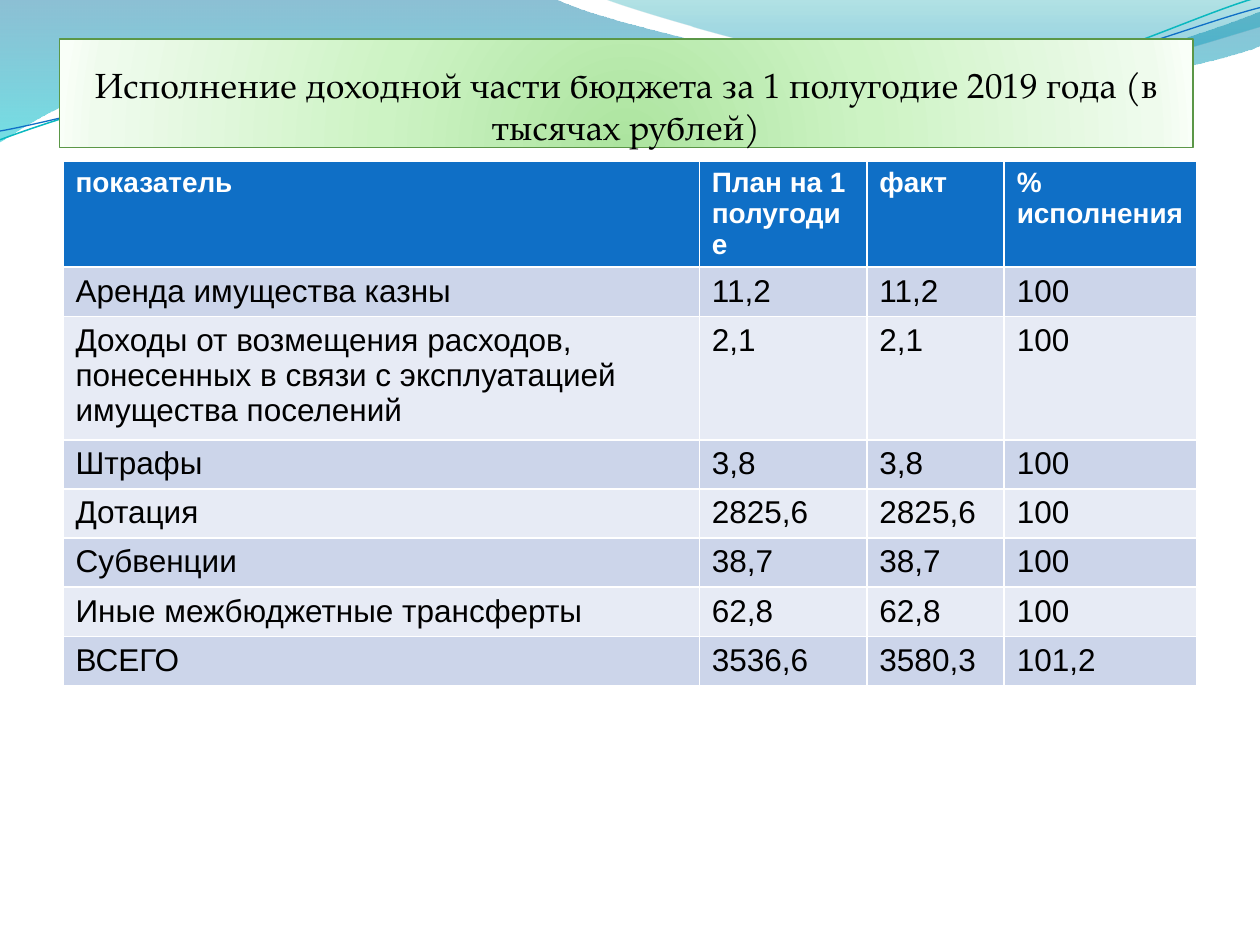
from math import cos, radians, sin

from lxml import etree
from pptx import Presentation
from pptx.dml.color import RGBColor
from pptx.enum.shapes import MSO_SHAPE
from pptx.enum.text import MSO_ANCHOR, PP_ALIGN
from pptx.oxml import parse_xml
from pptx.oxml.ns import qn
from pptx.util import Inches, Pt

RECT, BOTTOM, CENTER = MSO_SHAPE.RECTANGLE, MSO_ANCHOR.BOTTOM, PP_ALIGN.CENTER
NS = 'xmlns:a="http://schemas.openxmlformats.org/drawingml/2006/main"'
LINEAR_DOWN = '<a:lin ang="5400000" scaled="1"/>'
RADIAL = ('<a:path path="circle"><a:fillToRect l="50000" t="130000" '
          'r="50000" b="-30000"/></a:path>')

TITLE = "Исполнение доходной части бюджета за 1 полугодие 2019 года (в тысячах рублей)"
TITLE_STOPS = [(0, "ACE49F", 100), (43, "CDF3C4", 100),
               (93, "EFFBED", 100), (100, "F9FFF8", 100)]
ROWS = [
    ("показатель", "План на 1 полугодие", "факт", "% исполнения"),
    ("Аренда имущества казны", "11,2", "11,2", "100"),
    ("Доходы от возмещения расходов, понесенных в связи с эксплуатацией "
     "имущества поселений", "2,1", "2,1", "100"),
    ("Штрафы", "3,8", "3,8", "100"),
    ("Дотация", "2825,6", "2825,6", "100"),
    ("Субвенции", "38,7", "38,7", "100"),
    ("Иные межбюджетные трансферты", "62,8", "62,8", "100"),
    ("ВСЕГО", "3536,6", "3580,3", "101,2"),
]
COL_WIDTHS = [5.05, 1.33, 1.09, 1.53]
ROW_HEIGHTS = [0.68, 0.39, 0.98] + [0.39] * 5
HEADER_FILL, BANDS = "0F6FC6", ("E7EBF5", "CCD5EA")

# Box, then steps: a point is a straight step, six numbers are a Bezier step.
BANNERS = [
    ((-0.01, -0.01, 10.02, 1.14),
     [(0, 0), (4.4, -0.01), (4.76, 0.17, 6.64, 0.63, 7.58, 0.63),
      (8.53, 0.63, 9.58, 0.26, 10, 0.09), (10.01, 0.36),
      (9.83, 0.44, 8.7, 0.76, 7.46, 0.75), (6.22, 0.75, 3.82, 0.28, 2.57, 0.34),
      (1.29, 0.36, 0.46, 0.83, -0.01, 1.13), (0, 0)],
     [(0, "0074A1", 45), (100, "00C6CF", 55)]),
    ((4.79, -0.01, 5.21, 0.7),
     [(4.79, -0.01), (5.09, 0.11, 6.82, 0.62, 7.69, 0.65),
      (8.56, 0.69, 9.61, 0.32, 10, 0.21), (10, 0), (4.79, -0.01)],
     [(0, "00A1A9", 30), (80, "008BBF", 45)]),
]
WAVE_ANGLE = -2.7
WAVES = [
    ((-0.02, 0.22, 10.02, 0.71),
     [(0, 1.11), (0.48, 0.93, 1.58, 0.57, 2.77, 0.52),
      (3.95, 0.47, 5.93, 0.89, 7.13, 0.8), (8.33, 0.71, 9.38, 0.15, 9.98, -0.02)],
     "0AB8BF", 0.85),
    ((-0.02, 0.3, 10.03, 0.58),
     [(0, 1.04), (0.47, 0.96, 1.64, 0.61, 2.83, 0.56),
      (4.03, 0.51, 5.97, 0.84, 7.17, 0.75), (8.36, 0.67, 9.41, 0.21, 10, 0.06)],
     "0F6FC6", 0.75),
]


def rgb(value):
    return RGBColor.from_string(value)


def add_outline(slide, box, steps, close, angle=0):
    """Draw steps given in slide inches as a curved freeform turned by angle."""
    left, top, width, height = box
    turn = radians(-angle)

    def local(x, y):
        """Slide position to EMU inside the unturned box."""
        dx, dy = x - left - width / 2, y - top - height / 2
        return (Inches(width / 2 + dx * cos(turn) - dy * sin(turn)),
                Inches(height / 2 + dx * sin(turn) + dy * cos(turn)))

    builder = slide.shapes.build_freeform(*local(*steps[0]))
    builder.add_line_segments([local(*step[-2:]) for step in steps[1:]], close=close)
    sp = builder.convert_to_shape()
    sp.left, sp.top, sp.width, sp.height = map(Inches, box)
    sp.rotation = angle
    sp.shadow.inherit = False

    outline = next(sp._element.iter(qn("a:path")))
    outline.set("w", str(Inches(width)))
    outline.set("h", str(Inches(height)))
    for child in list(outline):
        outline.remove(child)
    for i, step in enumerate(steps):
        tag = "moveTo" if i == 0 else "lnTo" if len(step) == 2 else "cubicBezTo"
        command = etree.SubElement(outline, qn(f"a:{tag}"))
        for point in zip(step[::2], step[1::2]):
            x, y = local(*point)
            etree.SubElement(command, qn("a:pt"), x=str(x), y=str(y))
    if close:
        etree.SubElement(outline, qn("a:close"))
    return sp


def set_gradient(sp, stops, direction):
    gs = "".join(
        f'<a:gs pos="{pos * 1000}"><a:srgbClr val="{color}">'
        f'<a:alpha val="{alpha * 1000}"/></a:srgbClr></a:gs>'
        for pos, color, alpha in stops)
    sp.fill.background()
    spPr = sp._element.spPr
    spPr.replace(spPr.find(qn("a:noFill")), parse_xml(
        f'<a:gradFill {NS} rotWithShape="1"><a:gsLst>{gs}</a:gsLst>{direction}</a:gradFill>'))


def set_line(sp, color, width):
    sp.line.color.rgb = rgb(color)
    sp.line.width = Pt(width)


def add_title(slide):
    sp = slide.shapes.add_shape(RECT, Inches(0.47), Inches(0.31), Inches(9), Inches(0.86))
    set_gradient(sp, TITLE_STOPS, RADIAL)
    set_line(sp, "5B9747", 0.75)
    sp.shadow.inherit = False
    tf = sp.text_frame
    tf.word_wrap = True
    tf.vertical_anchor = BOTTOM
    tf.margin_left = tf.margin_right = tf.margin_bottom = 0
    tf.margin_top = Inches(0.05)
    p = tf.paragraphs[0]
    p.text = TITLE
    p.alignment = CENTER
    p.font.size, p.font.name = Pt(20), "TeX Gyre Pagella"
    p.font.color.rgb = rgb("000000")


def add_budget_table(slide):
    """Add the table; its default style draws the white cell borders."""
    table = slide.shapes.add_table(
        len(ROWS), len(COL_WIDTHS), Inches(0.5), Inches(1.28),
        Inches(sum(COL_WIDTHS)), Inches(sum(ROW_HEIGHTS))).table
    for column, width in zip(table.columns, COL_WIDTHS):
        column.width = Inches(width)
    for i, (row, height, texts) in enumerate(zip(table.rows, ROW_HEIGHTS, ROWS)):
        row.height = Inches(height)
        header = i == 0
        for cell, text in zip(row.cells, texts):
            cell.fill.solid()
            cell.fill.fore_color.rgb = rgb(HEADER_FILL if header else BANDS[i % 2])
            p = cell.text_frame.paragraphs[0]
            p.text = text
            p.font.name, p.font.bold = "Arial", header
            p.font.size = Pt(16 if header else 18)
            p.font.color.rgb = rgb("FFFFFF" if header else "000000")


def main():
    prs = Presentation()
    prs.slide_width, prs.slide_height = Inches(10), Inches(7.5)
    s = prs.slides.add_slide(prs.slide_layouts[6])
    for box, steps, stops in BANNERS:
        banner = add_outline(s, box, steps, close=True)
        set_gradient(banner, stops, LINEAR_DOWN)
        banner.line.fill.background()
    for box, steps, color, width in WAVES:
        wave = add_outline(s, box, steps, close=False, angle=WAVE_ANGLE)
        wave.fill.background()
        set_line(wave, color, width)
    add_title(s)
    add_budget_table(s)
    prs.save("out.pptx")


if __name__ == "__main__":
    main()
